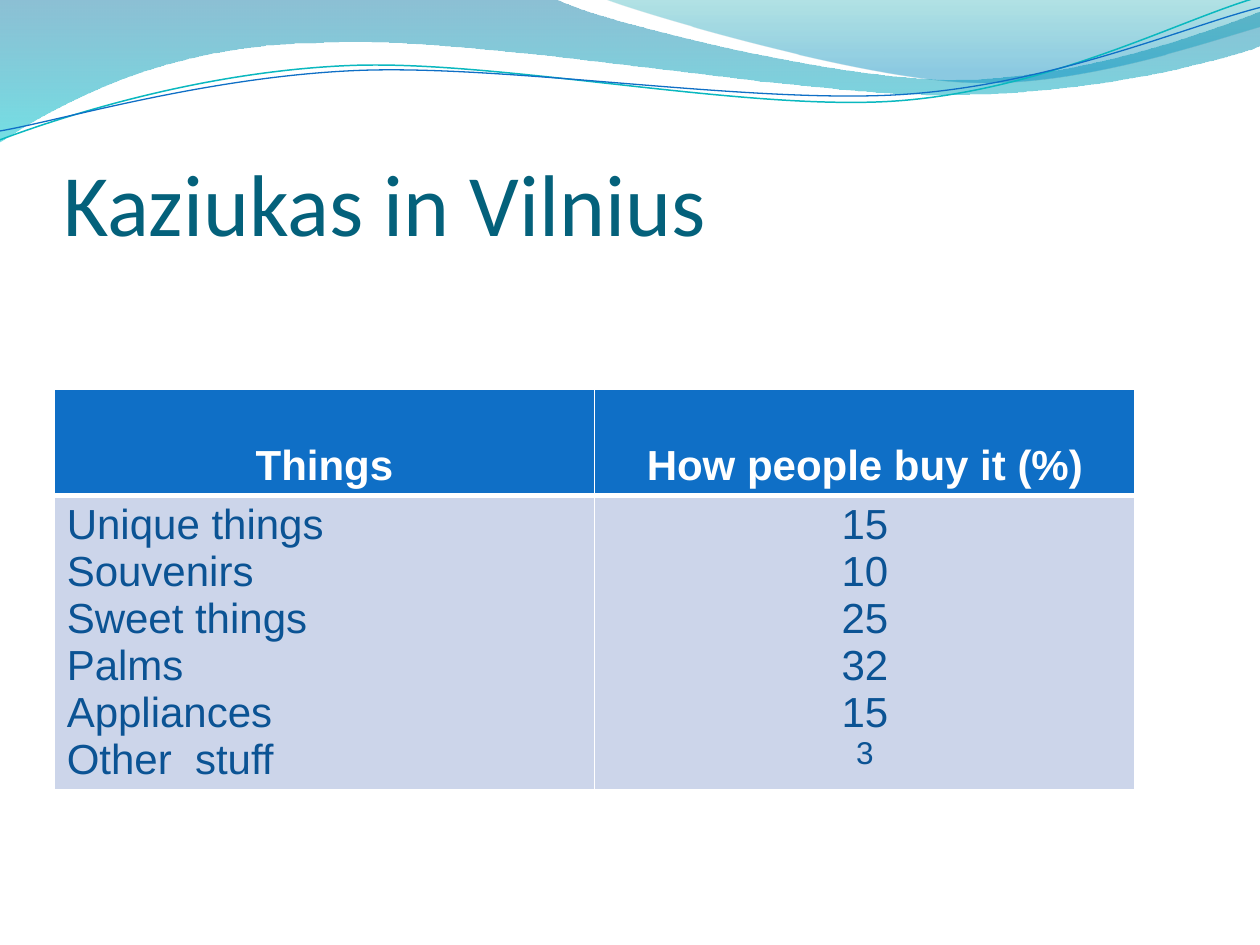
from math import cos, radians, sin

from lxml import etree
from pptx import Presentation
from pptx.dml.color import RGBColor
from pptx.enum.text import MSO_ANCHOR, PP_ALIGN
from pptx.oxml.ns import qn
from pptx.util import Inches, Pt

LEFT, CENTER = PP_ALIGN.LEFT, PP_ALIGN.CENTER
BOTTOM = MSO_ANCHOR.BOTTOM

WHITE = RGBColor(0xFF, 0xFF, 0xFF)
TEAL = RGBColor(0x04, 0x61, 0x7B)
BLUE = RGBColor(0x0F, 0x6F, 0xC6)
NAVY = RGBColor(0x0B, 0x53, 0x94)
PALE = RGBColor(0xCC, 0xD5, 0xEA)
AQUA = RGBColor(0x0A, 0xB8, 0xBF)
DEEP = RGBColor(0x00, 0x74, 0xA1)
CYAN = RGBColor(0x00, 0xC6, 0xCF)
SEA = RGBColor(0x00, 0xA1, 0xA9)
SKY = RGBColor(0x00, 0x8B, 0xBF)

TITLE = "Kaziukas in Vilnius"
HEADERS = ["Things", "How people buy it (%)"]
ITEMS = [
    ("Unique things", "15", 24),
    ("Souvenirs", "10", 24),
    ("Sweet things", "25", 24),
    ("Palms", "32", 24),
    ("Appliances", "15", 24),
    ("Other  stuff", "3", 18),
]
ROW_HEIGHTS = [0.67, 1.85]
COLUMN_WIDTH = 4.29

BANDS = [
    ([[(0, -0.01)], [(4.4, -0.01)],
      [(4.76, 0.17), (6.64, 0.63), (7.58, 0.63)],
      [(8.53, 0.63), (9.58, 0.26), (10, 0.09)], [(10.01, 0.36)],
      [(9.83, 0.44), (8.7, 0.76), (7.46, 0.75)],
      [(6.22, 0.75), (3.82, 0.28), (2.57, 0.34)],
      [(1.29, 0.35), (0.46, 0.83), (-0.01, 1.13)], [(0, -0.01)]],
     [(0, DEEP, 45), (1, CYAN, 55)]),
    ([[(4.79, -0.01)],
      [(5.09, 0.11), (6.82, 0.62), (7.69, 0.65)],
      [(8.56, 0.69), (9.61, 0.32), (10, 0.21)], [(10, 0)], [(4.79, -0.01)]],
     [(0, SEA, 30), (0.8, SKY, 45)]),
]
WAVE_TILT = 2.7
WAVES = [
    ([[(0, 1.11)],
      [(0.48, 0.93), (1.58, 0.57), (2.77, 0.52)],
      [(3.95, 0.47), (5.93, 0.89), (7.13, 0.8)],
      [(8.33, 0.71), (9.38, 0.15), (9.98, -0.02)]],
     (4.99, 0.57), AQUA, 0.85),
    ([[(0, 1.04)],
      [(0.47, 0.96), (1.64, 0.61), (2.83, 0.56)],
      [(4.03, 0.51), (5.97, 0.83), (7.17, 0.75)],
      [(8.36, 0.67), (9.41, 0.21), (10, 0.06)]],
     (5, 0.59), BLUE, 0.75),
]


def turn(point, center, degrees):
    a = radians(degrees)
    dx, dy = point[0] - center[0], point[1] - center[1]
    return center[0] + dx * cos(a) - dy * sin(a), center[1] + dx * sin(a) + dy * cos(a)


def add_outline(shapes, steps, close):
    emu = [(Inches(x), Inches(y)) for step in steps for x, y in step]
    builder = shapes.build_freeform(*emu[0])
    builder.add_line_segments(emu[1:], close=close)
    sp = builder.convert_to_shape()
    sp.shadow.inherit = False
    segments = iter(list(sp.element.spPr.iter(qn("a:lnTo"))))
    for step in steps[1:]:
        lines = [next(segments) for _ in step]
        if len(lines) == 3:
            curve = etree.Element(qn("a:cubicBezTo"))
            lines[0].addprevious(curve)
            for line in lines:
                curve.append(line[0])
                line.getparent().remove(line)
    return sp


def add_band(shapes, steps, stops):
    sp = add_outline(shapes, steps, True)
    sp.line.fill.background()
    sp.fill.gradient()
    sp.fill.gradient_angle = 270
    for stop, (position, color, _) in zip(sp.fill.gradient_stops, stops):
        stop.position = position
        stop.color.rgb = color
    for clr, (_, _, opacity) in zip(sp.element.spPr.iter(qn("a:srgbClr")), stops):
        etree.SubElement(clr, qn("a:alpha"), val=str(opacity * 1000))


def add_wave(shapes, steps, center, color, width):
    level = [[turn(point, center, WAVE_TILT) for point in step] for step in steps]
    sp = add_outline(shapes, level, False)
    sp.rotation = 360 - WAVE_TILT
    sp.fill.background()
    sp.line.color.rgb = color
    sp.line.width = Pt(width)


def add_run(p, text, size, font, color, bold=False):
    r = p.add_run()
    r.text = text
    r.font.size = Pt(size)
    r.font.name = font
    r.font.color.rgb = color
    r.font.bold = bold


def style_cell(cell, fill, top, bottom):
    cell.fill.solid()
    cell.fill.fore_color.rgb = fill
    tcPr = cell._tc.get_or_add_tcPr()
    for i, (side, width) in enumerate([("L", 1), ("R", 1), ("T", top), ("B", bottom)]):
        ln = etree.Element(qn("a:ln" + side), w=str(Pt(width)))
        solid = etree.SubElement(ln, qn("a:solidFill"))
        etree.SubElement(solid, qn("a:srgbClr"), val=str(WHITE))
        tcPr.insert(i, ln)


def add_sales_table(shapes):
    frame = shapes.add_table(2, 2, Inches(0.43), Inches(3.09),
                             Inches(2 * COLUMN_WIDTH), Inches(sum(ROW_HEIGHTS)))
    table = frame.table
    table.horz_banding = False
    for row, height in zip(table.rows, ROW_HEIGHTS):
        row.height = Inches(height)
    frame.height = Inches(3.4)
    for col, header in enumerate(HEADERS):
        head, body = table.cell(0, col), table.cell(1, col)
        style_cell(head, BLUE, 1, 3)
        style_cell(body, PALE, 3, 1)
        p = head.text_frame.paragraphs[0]
        p.alignment = CENTER
        p.line_spacing = 2.0
        add_run(p, header, 24, "Arial", WHITE, True)
        tf = body.text_frame
        for i, item in enumerate(ITEMS):
            p = tf.add_paragraph() if i else tf.paragraphs[0]
            p.alignment = CENTER if col else LEFT
            add_run(p, item[col], item[2] if col else 24, "Arial", NAVY)


def place_title(title):
    title.left, title.top = Inches(0.5), Inches(0.77)
    title.width, title.height = Inches(9), Inches(1.25)
    tf = title.text_frame
    tf.word_wrap = True
    tf.vertical_anchor = BOTTOM
    tf.margin_left = tf.margin_right = tf.margin_bottom = 0
    tf.margin_top = Inches(0.05)
    p = tf.paragraphs[0]
    p.alignment = LEFT
    add_run(p, TITLE, 50, "Calibri", TEAL)


def main():
    prs = Presentation()
    prs.slide_width, prs.slide_height = Inches(10), Inches(7.5)
    s = prs.slides.add_slide(prs.slide_layouts[5])
    title = s.shapes.title
    for band in BANDS:
        add_band(s.shapes, *band)
    for wave in WAVES:
        add_wave(s.shapes, *wave)
    title.element.getparent().append(title.element)
    place_title(title)
    add_sales_table(s.shapes)
    prs.save("out.pptx")


if __name__ == "__main__":
    main()
